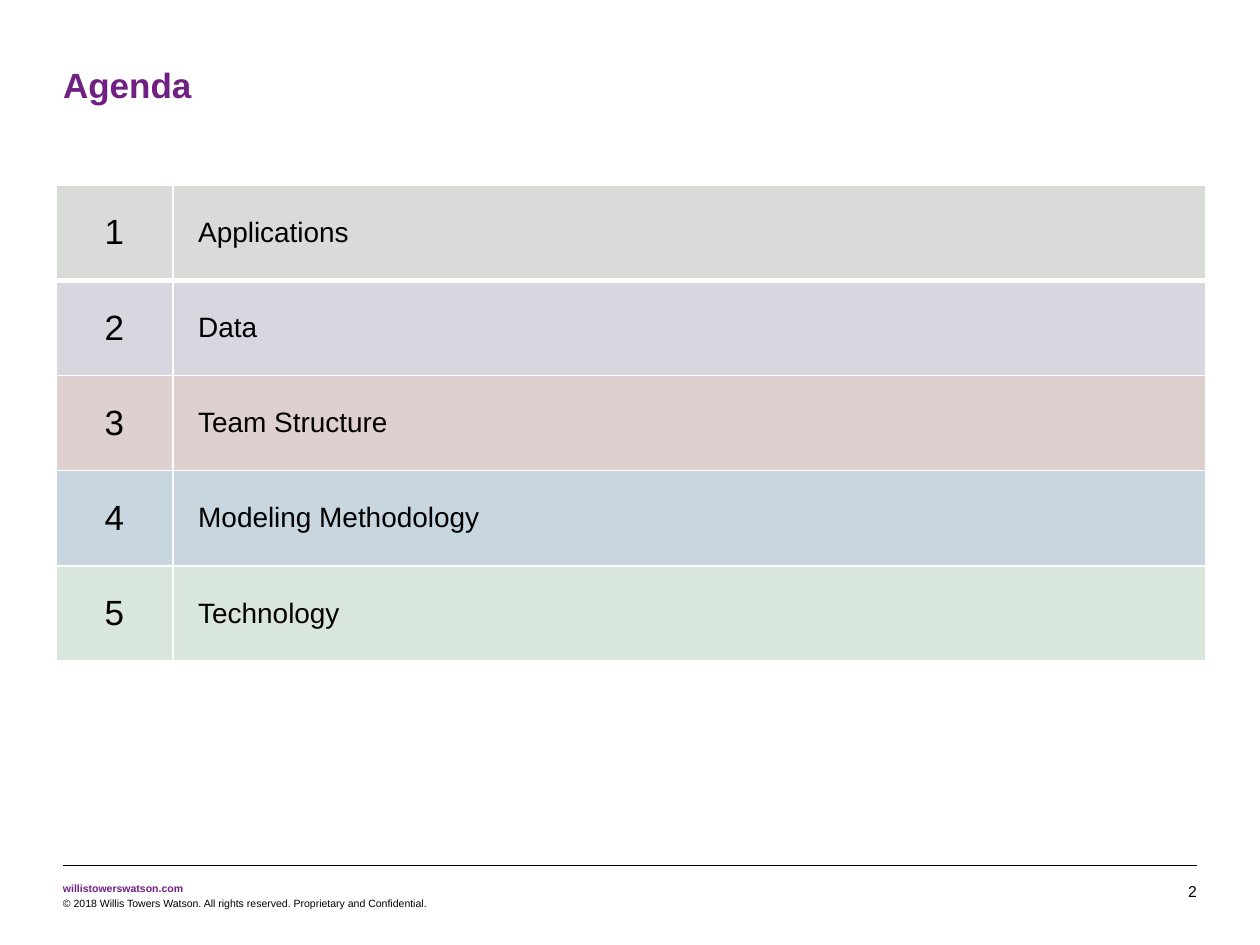
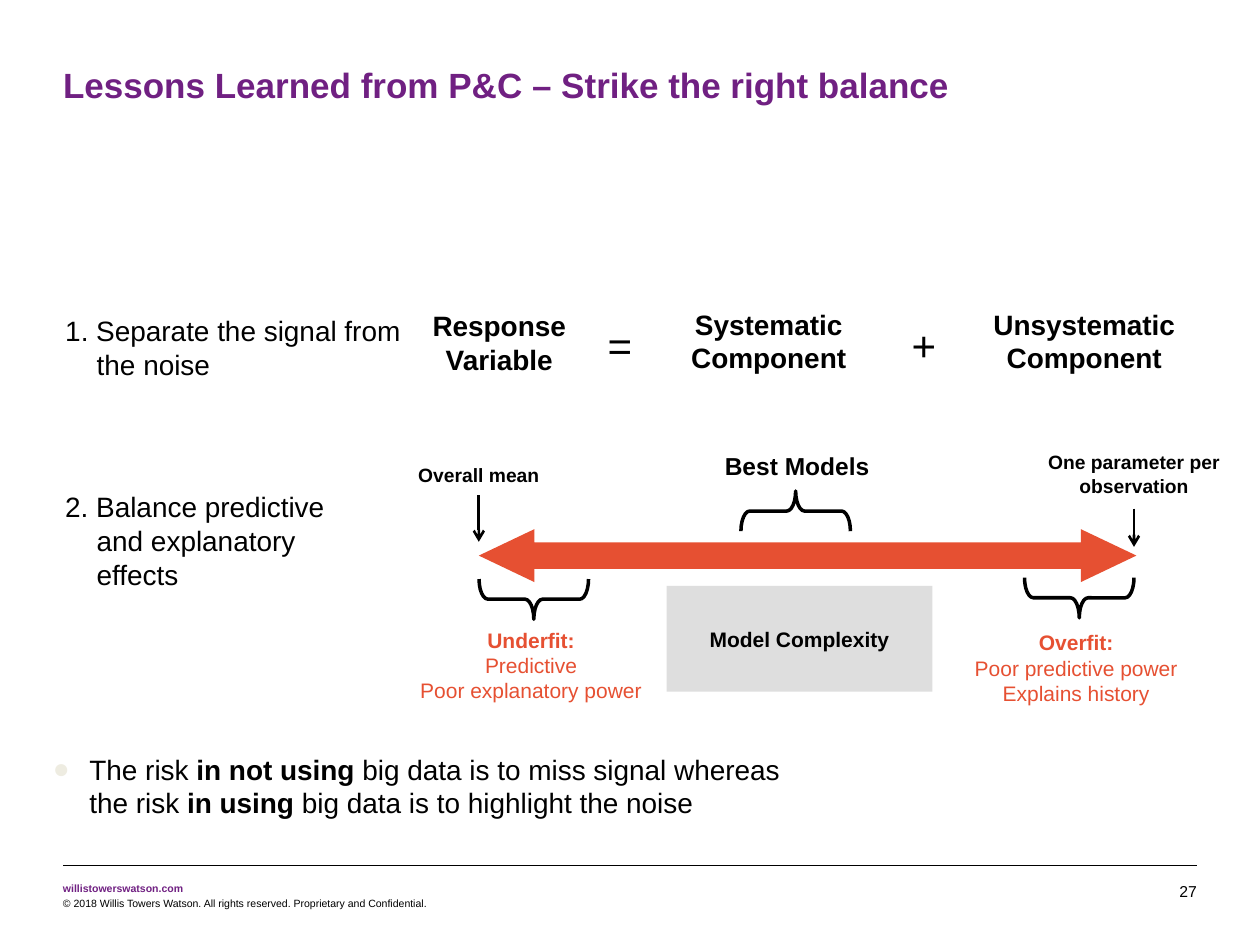
from lxml.etree import SubElement
from pptx import Presentation
from pptx.dml.color import RGBColor
from pptx.enum.shapes import MSO_CONNECTOR, MSO_SHAPE as SHAPE
from pptx.enum.text import MSO_ANCHOR as ANCHOR, MSO_AUTO_SIZE, PP_ALIGN as ALIGN
from pptx.oxml.ns import qn
from pptx.util import Pt

FONT = "Arial"
PURPLE, ORANGE, BLACK, WHITE = "702082", "E65032", "000000", "FFFFFF"
GREY, PALE = "DEDEDE", "EEECE1"
TITLE_ONLY, TITLE_BODY = 5, 1

SITE = "willistowerswatson.com"
COPYRIGHT = ("© 2018 Willis Towers Watson. All rights reserved. "
             "Proprietary and Confidential.")

AGENDA = [
    ("Applications", "D8DBD8"),
    ("Data", "D8D7DF"),
    ("Team Structure", "DDD0CF"),
    ("Modeling Methodology", "C8D7DF"),
    ("Technology", "D9E6DC"),
]

# Paragraphs are lists of (text, bold) runs; boxes are left, top, width, height.
LESSONS = [
    ("1. Separate the signal from the noise", (30.2, 175.7, 214, 68)),
    ("2. Balance predictive \nand explanatory \neffects", (30.2, 276.5, 185, 66)),
]
EQUATION = [
    ("Response", "Variable", (231.8, 172.8, 107, 46)),
    ("Systematic", "Component", (377.3, 172.1, 124, 46)),
    ("Unsystematic", "Component", (548.6, 172.1, 142, 46)),
]
OPERATORS = [("=", 354.3), ("+", 528)]
RANGE_ENDS = [  # label, box, tip of the arrow below it
    ("Overall mean", (221.6, 261.4, 104, 21.6), 309.6),
    ("One parameter per observation", (576.5, 254, 143, 36.7), 312.5),
]
BEST = ("Best Models", (388, 254, 135, 24))
FITS = [
    ("Underfit:\n", "Predictive\nPoor explanatory power", (224, 355, 159, 51)),
    ("Overfit:\n", "Poor predictive power\nExplains history", (541, 356.4, 148, 51)),
]
BRACES = [(454.7, 292, 270), (305, 342.4, 90), (616.7, 341.6, 90)]  # centre, turn
BRACE_SIZE = (23, 62.6)
COMPLEXITY = ("Model Complexity", (380.9, 334.8, 152, 60.5))
SCALE_ARROW = (273.6, 302.4, 375.8, 30.2)
RISK = [("The risk ", False), ("in not using", True),
        (" big data is to miss signal whereas \nthe risk ", False),
        ("in using", True), (" big data is to highlight the noise", False)]
RISK_BOX = (30.2, 429.8, 672, 60)


def rgb(value):
    return RGBColor.from_string(value)


def pts(values):
    return [Pt(v) for v in values]


def place(sp, box):
    sp.left, sp.top, sp.width, sp.height = pts(box)


def apply(target, formats):
    for name, value in formats.items():
        setattr(target, name, value)


def write(tf, paragraphs, size, color=BLACK, align=ALIGN.LEFT, anchor=ANCHOR.TOP,
          inset=None):
    """Fill a text frame; a newline inside a run becomes a line break."""
    apply(tf, dict(word_wrap=True, auto_size=MSO_AUTO_SIZE.NONE,
                   vertical_anchor=anchor))
    if inset is not None:
        for side in ("left", "top", "right", "bottom"):
            setattr(tf, f"margin_{side}", Pt(inset))
    for i, runs in enumerate(paragraphs):
        p = tf.add_paragraph() if i else tf.paragraphs[0]
        apply(p, dict(alignment=align, space_before=Pt(0)))
        for text, bold in runs:
            for j, line in enumerate(text.split("\n")):
                if j:
                    p.add_line_break()
                if line:
                    r = p.add_run()
                    r.text = line
                    apply(r.font, dict(name=FONT, size=Pt(size), bold=bold))
                    r.font.color.rgb = rgb(color)


def add_text(s, box, paragraphs, size, **formats):
    sp = s.shapes.add_textbox(*pts(box))
    write(sp.text_frame, paragraphs, size, **formats)
    return sp


def add_filled(s, kind, box, color):
    sp = s.shapes.add_shape(kind, *pts(box))
    sp.shadow.inherit = False
    sp.fill.solid()
    sp.fill.fore_color.rgb = rgb(color)
    sp.line.fill.background()
    return sp


def add_line(s, x1, y1, x2, y2, width, arrow=False):
    line = s.shapes.add_connector(MSO_CONNECTOR.STRAIGHT, *pts((x1, y1, x2, y2)))
    line.line.color.rgb = rgb(BLACK)
    line.line.width = Pt(width)
    if arrow:
        SubElement(line.line._get_or_add_ln(), qn("a:tailEnd"), type="arrow")
    SubElement(line._element.spPr, qn("a:effectLst"))
    return line


def add_brace(s, cx, cy, turn):
    w, h = BRACE_SIZE
    sp = s.shapes.add_shape(SHAPE.RIGHT_BRACE, *pts((cx - w / 2, cy - h / 2, w, h)))
    sp.shadow.inherit = False
    sp.rotation = turn
    sp.adjustments[0] = 0.22
    sp.fill.background()
    sp.line.color.rgb = rgb(BLACK)
    sp.line.width = Pt(2)


def set_hanging(p, indent, bullet=None):
    pPr = p._p.get_or_add_pPr()
    pPr.set("marL", str(Pt(indent)))
    pPr.set("indent", str(-Pt(indent)))
    if bullet:
        clr = SubElement(pPr, qn("a:buClr"))
        SubElement(clr, qn("a:srgbClr"), val=PALE)
        SubElement(pPr, qn("a:buFont"), typeface=FONT)
        SubElement(pPr, qn("a:buChar"), char=bullet)


def set_borders(cell, top, bottom):
    tcPr = cell._tc.get_or_add_tcPr()
    for side, width in (("L", 1), ("R", 1), ("T", top), ("B", bottom)):
        ln = SubElement(tcPr, qn(f"a:ln{side}"), w=str(Pt(width)))
        fill = SubElement(ln, qn("a:solidFill"))
        SubElement(fill, qn("a:srgbClr"), val=WHITE)


def new_slide(prs, layout, title, number):
    """Add a slide with the shared title style, rule and footer."""
    s = prs.slides.add_slide(prs.slide_layouts[layout])
    place(s.shapes.title, (36, 36, 648, 24.5))
    write(s.shapes.title.text_frame, [[(title, True)]], 20, color=PURPLE, inset=0)
    add_line(s, 36, 494.6, 684, 494.6, 0.25)
    add_text(s, (36, 504, 200, 7.2), [[(SITE, True)]], 6, color=PURPLE, inset=0)
    add_text(s, (36, 512.6, 415.4, 7.2), [[(COPYRIGHT, False)]], 6, inset=0)
    add_text(s, (653.8, 504, 30.2, 10.8), [[(number, False)]], 9,
             align=ALIGN.RIGHT, anchor=ANCHOR.BOTTOM, inset=0)
    return s


def build_agenda(prs):
    s = new_slide(prs, TITLE_ONLY, "Agenda", "2")
    row_height, widths = 54.4, (67, 590.4)
    table = s.shapes.add_table(len(AGENDA), 2, *pts(
        (31.9, 105.8, sum(widths), row_height * len(AGENDA)))).table
    apply(table, dict(first_row=False, horz_banding=False))
    for column, width in zip(table.columns, widths):
        column.width = Pt(width)
    for i, (topic, color) in enumerate(AGENDA):
        table.rows[i].height = Pt(row_height)
        parts = ((str(i + 1), 20, ALIGN.CENTER), (topic, 16, ALIGN.LEFT))
        for cell, (text, size, align) in zip(table.rows[i].cells, parts):
            write(cell.text_frame, [[(text, False)]], size, align=align)
            apply(cell, dict.fromkeys(("margin_left", "margin_right", "margin_top",
                                       "margin_bottom"), Pt(14.4)))
            cell.vertical_anchor = ANCHOR.MIDDLE
            set_borders(cell, top=3 if i == 1 else 1, bottom=3 if i == 0 else 1)
            cell.fill.solid()
            cell.fill.fore_color.rgb = rgb(color)


def build_balance(prs):
    s = new_slide(prs, TITLE_BODY,
                  "Lessons Learned from P&C – Strike the right balance", "27")
    center = dict(align=ALIGN.CENTER)

    for text, box in LESSONS:
        sp = add_text(s, box, [[(text, False)]], 16)
        set_hanging(sp.text_frame.paragraphs[0], 18)
    for first, second, box in EQUATION:
        add_text(s, box, [[(first, True)], [(second, True)]], 16, **center)
    for sign, cx in OPERATORS:
        add_text(s, (cx - 18, 179, 36, 36), [[(sign, False)]], 24, **center)

    scale = add_filled(s, SHAPE.LEFT_RIGHT_ARROW, SCALE_ARROW, ORANGE)
    scale.adjustments[0], scale.adjustments[1] = 0.5, 1.05
    for text, box, tip in RANGE_ENDS:
        label = add_text(s, box, [[(text, True)]], 11, **center)
        left, top, width, height = box
        x = left + width / 2
        add_line(s, x, top + height, x, tip, 1.5, arrow=True).begin_connect(label, 2)
    text, box = BEST
    add_text(s, box, [[(text, True)]], 14, **center)
    for brace in BRACES:
        add_brace(s, *brace)
    for name, effects, box in FITS:
        add_text(s, box, [[(name, True), (effects, False)]], 12, color=ORANGE, **center)
    text, box = COMPLEXITY
    sp = add_filled(s, SHAPE.RECTANGLE, box, GREY)
    write(sp.text_frame, [[(text, True)]], 12, anchor=ANCHOR.MIDDLE, **center)

    body = s.placeholders[1]
    place(body, RISK_BOX)
    write(body.text_frame, [RISK], 16, inset=0)
    set_hanging(body.text_frame.paragraphs[0], 20.9, bullet="●")


def main():
    prs = Presentation()
    prs.slide_width, prs.slide_height = Pt(720), Pt(540)
    build_agenda(prs)
    build_balance(prs)
    prs.save("out.pptx")


if __name__ == "__main__":
    main()
